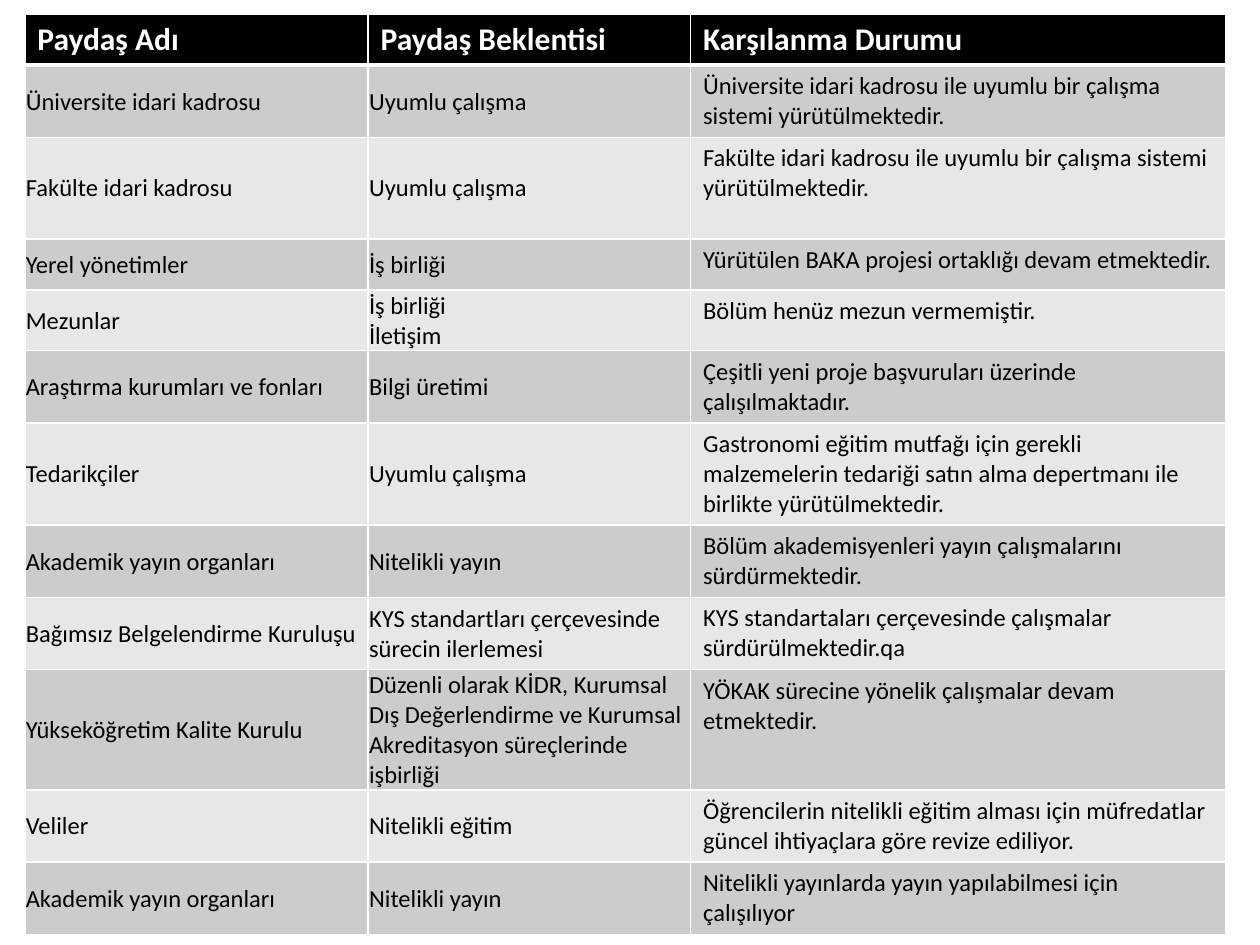
from dataclasses import dataclass

from lxml import etree
from pptx import Presentation
from pptx import util as u
from pptx.dml import color
from pptx.enum import text
from pptx.oxml import ns


@dataclass(frozen=True)
class Theme:
    font: str = "Calibri"
    header_size: int = 18
    body_size: int = 14
    header_fill: str = "000000"
    header_text: str = "FFFFFF"
    body_text: str = "000000"
    bands: tuple = ("CCCCCC", "E7E7E7")
    border: str = "FFFFFF"


theme = Theme()

HEADERS = ("Paydaş Adı", "Paydaş Beklentisi", "Karşılanma Durumu")
# Row height in cm, stakeholder, expectation, status
STAKEHOLDERS = [
    (1.45, "Üniversite idari kadrosu", "Uyumlu çalışma",
     "Üniversite idari kadrosu ile uyumlu bir çalışma sistemi yürütülmektedir."),
    (2.05, "Fakülte idari kadrosu", "Uyumlu çalışma",
     "Fakülte idari kadrosu ile uyumlu bir çalışma sistemi yürütülmektedir."),
    (1.03, "Yerel yönetimler", "İş birliği",
     "Yürütülen BAKA projesi ortaklığı devam etmektedir."),
    (1.2, "Mezunlar", "İş birliği\nİletişim",
     "Bölüm henüz mezun vermemiştir."),
    (1.45, "Araştırma kurumları ve fonları", "Bilgi üretimi",
     "Çeşitli yeni proje başvuruları üzerinde çalışılmaktadır."),
    (2.05, "Tedarikçiler", "Uyumlu çalışma",
     "Gastronomi eğitim mutfağı için gerekli malzemelerin tedariği satın alma "
     "depertmanı ile birlikte yürütülmektedir."),
    (1.45, "Akademik yayın organları", "Nitelikli yayın",
     "Bölüm akademisyenleri yayın çalışmalarını sürdürmektedir."),
    (1.45, "Bağımsız Belgelendirme Kuruluşu",
     "KYS standartları çerçevesinde sürecin ilerlemesi",
     "KYS standartaları çerçevesinde çalışmalar sürdürülmektedir.qa"),
    (2.4, "Yükseköğretim Kalite Kurulu",
     "Düzenli olarak KİDR, Kurumsal Dış Değerlendirme ve Kurumsal "
     "Akreditasyon süreçlerinde işbirliği",
     "YÖKAK sürecine yönelik çalışmalar devam etmektedir."),
    (1.45, "Veliler", "Nitelikli eğitim",
     "Öğrencilerin nitelikli eğitim alması için müfredatlar güncel "
     "ihtiyaçlara göre revize ediliyor."),
    (1.45, "Akademik yayın organları", "Nitelikli yayın",
     "Nitelikli yayınlarda yayın yapılabilmesi için çalışılıyor"),
]
ROWS = [(1.03, *HEADERS)] + STAKEHOLDERS
COLUMN_WIDTHS = (6.92, 6.5, 10.78)


def add_borders(cell, bottom_width):
    properties = cell._tc.get_or_add_tcPr()
    for side in ("L", "R", "T", "B"):
        width = bottom_width if side == "B" else 1
        line = etree.SubElement(properties, ns.qn(f"a:ln{side}"), w=str(u.Pt(width)))
        fill = etree.SubElement(line, ns.qn("a:solidFill"))
        etree.SubElement(fill, ns.qn("a:srgbClr"), val=theme.border)


def write(cell, content, size, text_color, bold):
    paragraph = cell.text_frame.paragraphs[0]
    for index, line in enumerate(content.split("\n")):
        if index:
            paragraph.add_line_break()
        run = paragraph.add_run()
        run.text = line
        run.font.name = theme.font
        run.font.size = u.Pt(size)
        run.font.bold = bold
        run.font.color.rgb = color.RGBColor.from_string(text_color)


# Slide
presentation = Presentation()
presentation.slide_width = u.Cm(25.4)
presentation.slide_height = u.Cm(19.05)
slide = presentation.slides.add_slide(presentation.slide_layouts[6])

# Table grid
table = slide.shapes.add_table(
    len(ROWS), len(COLUMN_WIDTHS), u.Cm(0.5), u.Cm(0.28),
    u.Cm(sum(COLUMN_WIDTHS)), u.Cm(sum(row[0] for row in ROWS))).table
for column, width in zip(table.columns, COLUMN_WIDTHS):
    column.width = u.Cm(width)

# Header row, then banded stakeholder rows
for row_index, (height, *contents) in enumerate(ROWS):
    table.rows[row_index].height = u.Cm(height)
    is_header = row_index == 0
    for column_index, content in enumerate(contents):
        cell = table.cell(row_index, column_index)
        add_borders(cell, 3 if is_header else 1)
        cell.fill.solid()
        band = theme.header_fill if is_header else theme.bands[(row_index - 1) % 2]
        cell.fill.fore_color.rgb = color.RGBColor.from_string(band)
        if is_header:
            write(cell, content, theme.header_size, theme.header_text, True)
            continue
        write(cell, content, theme.body_size, theme.body_text, False)
        # The first two columns are centred vertically with tight margins
        if column_index < 2:
            cell.vertical_anchor = text.MSO_ANCHOR.MIDDLE
            cell.margin_left = cell.margin_right = cell.margin_top = u.Cm(0.02)
            cell.margin_bottom = 0

presentation.save("out.pptx")
